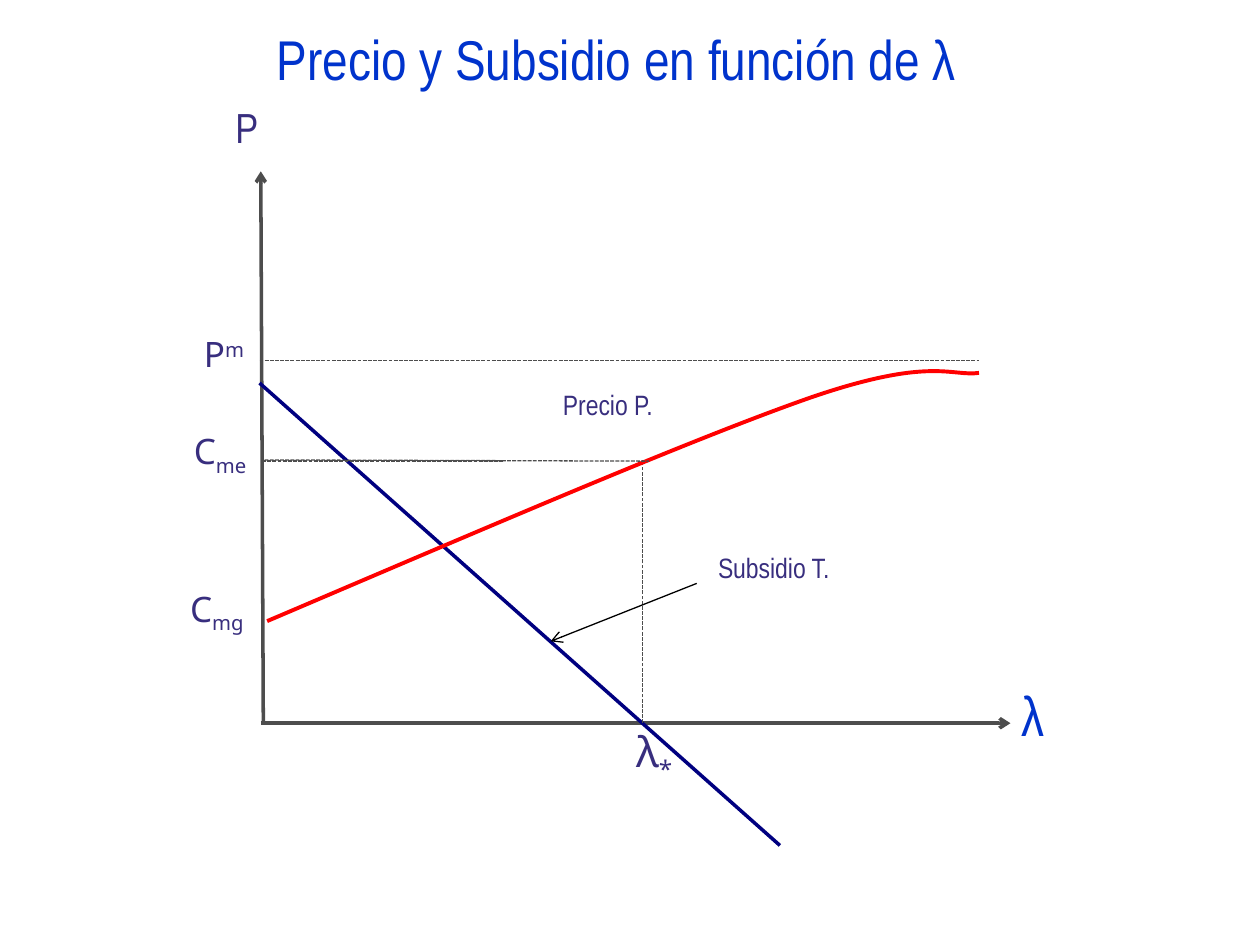
from lxml.etree import SubElement
from pptx import Presentation
from pptx.dml.color import RGBColor
from pptx.enum.dml import MSO_LINE
from pptx.enum.shapes import MSO_CONNECTOR
from pptx.enum.text import MSO_ANCHOR, PP_ALIGN
from pptx.oxml.ns import qn
from pptx.util import Inches, Pt

BLUE = RGBColor(0x00, 0x33, 0xCC)
PURPLE = RGBColor(0x38, 0x2E, 0x7E)
NAVY = RGBColor(0x00, 0x00, 0x80)
GRAY = RGBColor(0x4D, 0x4D, 0x4D)
RED = RGBColor(0xFF, 0x00, 0x00)
BLACK = RGBColor(0x00, 0x00, 0x00)

NARROW, SANS = "Arial Narrow", "Noto Sans"
COLS, ROWS = 100, 75

# Line formats
AXIS = {"color": GRAY, "width": 2}
GUIDE = {"color": GRAY, "width": 0.75, "dash": MSO_LINE.SQUARE_DOT}
SUBSIDY = {"color": NAVY, "width": 2}
PRICE = {"color": RED, "width": 2.25}
POINTER = {"color": BLACK, "width": 0.75}

# Text formats
TITLE = {"name": NARROW, "size": Pt(32), "color": BLUE}
AXIS_NAME = {"name": NARROW, "size": Pt(24), "color": PURPLE}
CURVE_NAME = {"name": NARROW, "size": Pt(16), "color": PURPLE}
MARK = {"name": SANS, "size": Pt(20), "color": PURPLE}
BIG_MARK = {**MARK, "size": Pt(24)}


class Diagram:
    """Draws on one slide, measured in grid columns and rows."""

    def __init__(self, prs):
        self.s = prs.slides.add_slide(prs.slide_layouts[6])
        self.col = prs.slide_width / COLS
        self.row = prs.slide_height / ROWS

    def place(self, x, y):
        return round(x * self.col), round(y * self.row)

    def style_line(self, line, color, width, dash=None):
        line.color.rgb = color
        line.width = Pt(width)
        if dash:
            line.dash_style = dash

    def text(self, x, y, w, h, fmt, words, small=None, shift=0, centered=False):
        sp = self.s.shapes.add_textbox(*self.place(x, y), *self.place(w, h))
        tf = sp.text_frame
        tf.word_wrap = True
        p = tf.paragraphs[0]
        if centered:
            tf.vertical_anchor = MSO_ANCHOR.MIDDLE
            p.alignment = PP_ALIGN.CENTER
        for part, base in ((words, 0), (small, shift)):
            if not part:
                continue
            r = p.add_run()
            r.text = part
            for key, value in fmt.items():
                if key == "color":
                    r.font.color.rgb = value
                else:
                    setattr(r.font, key, value)
            if base:
                r.font._element.set("baseline", str(base * 1000))

    def line(self, start, end, fmt, arrow=False):
        cx = self.s.shapes.add_connector(
            MSO_CONNECTOR.STRAIGHT, *self.place(*start), *self.place(*end))
        self.style_line(cx.line, **fmt)
        if arrow:
            SubElement(cx.line._get_or_add_ln(), qn("a:tailEnd"), type="arrow")
        SubElement(cx._element.spPr, qn("a:effectLst"))

    def curve(self, points, fmt):
        """Cubic curve: a start point, then three points per segment."""
        start, *rest = [self.place(*pt) for pt in points]
        fb = self.s.shapes.build_freeform(*start)
        fb.add_line_segments(rest, close=False)
        sp = fb.convert_to_shape()
        sp.shadow.inherit = False
        sp.fill.background()
        self.style_line(sp.line, **fmt)
        # Turn each three straight steps into one Bézier segment
        path = next(sp._element.iter(qn("a:path")))
        steps = path.findall(qn("a:lnTo"))
        for i in range(0, len(steps), 3):
            bezier = SubElement(path, qn("a:cubicBezTo"))
            for step in steps[i:i + 3]:
                bezier.append(step[0])
                path.remove(step)


def main():
    prs = Presentation()
    prs.slide_width, prs.slide_height = Inches(10), Inches(7.5)
    d = Diagram(prs)

    d.text(6.7, 1.8, 84.5, 5.7, TITLE, "Precio y Subsidio en función de λ", centered=True)

    # Axes
    d.line((20.7, 57.4), (80.2, 57.4), AXIS, arrow=True)
    d.line((20.9, 57.4), (20.7, 13.6), AXIS, arrow=True)
    d.text(17.7, 7.6, 3, 5, AXIS_NAME, "P")
    d.text(80.1, 53.5, 3, 6.4, TITLE, "λ")

    # Subsidy line, guides and price curve
    d.line((20.6, 30.4), (61.9, 67.1), SUBSIDY)
    d.line((20.8, 36.6), (39.9, 36.6), GUIDE)
    d.line((51, 57.4), (51, 36.5), GUIDE)
    d.curve([(21.2, 49.3),
             (38.1, 42.1), (55, 34.8), (64.5, 31.5),
             (73.9, 28.3), (75.5, 29.9), (77.7, 29.6)], PRICE)
    d.line((20.6, 28.6), (77.7, 28.6), GUIDE)
    d.line((21, 36.5), (51.5, 36.6), GUIDE)

    # Curve names
    d.line((55.3, 46.3), (43.7, 50.9), POINTER, arrow=True)
    d.text(56, 43.2, 12.9, 3.7, CURVE_NAME, "Subsidio T.")
    d.text(43.7, 30.3, 10.3, 3.7, CURVE_NAME, "Precio P.")

    # Marks on the axes
    d.text(49.5, 57.1, 5.9, 5.1, BIG_MARK, "λ", "*", -25)
    d.text(14.1, 46.1, 8.1, 4.4, MARK, "C", "mg", -25)
    d.text(14.4, 33.6, 9.6, 4.4, MARK, "C", "me", -25)
    d.text(15.2, 25.9, 9.6, 4.4, MARK, "P", "m", 30)

    prs.save("out.pptx")


if __name__ == "__main__":
    main()
